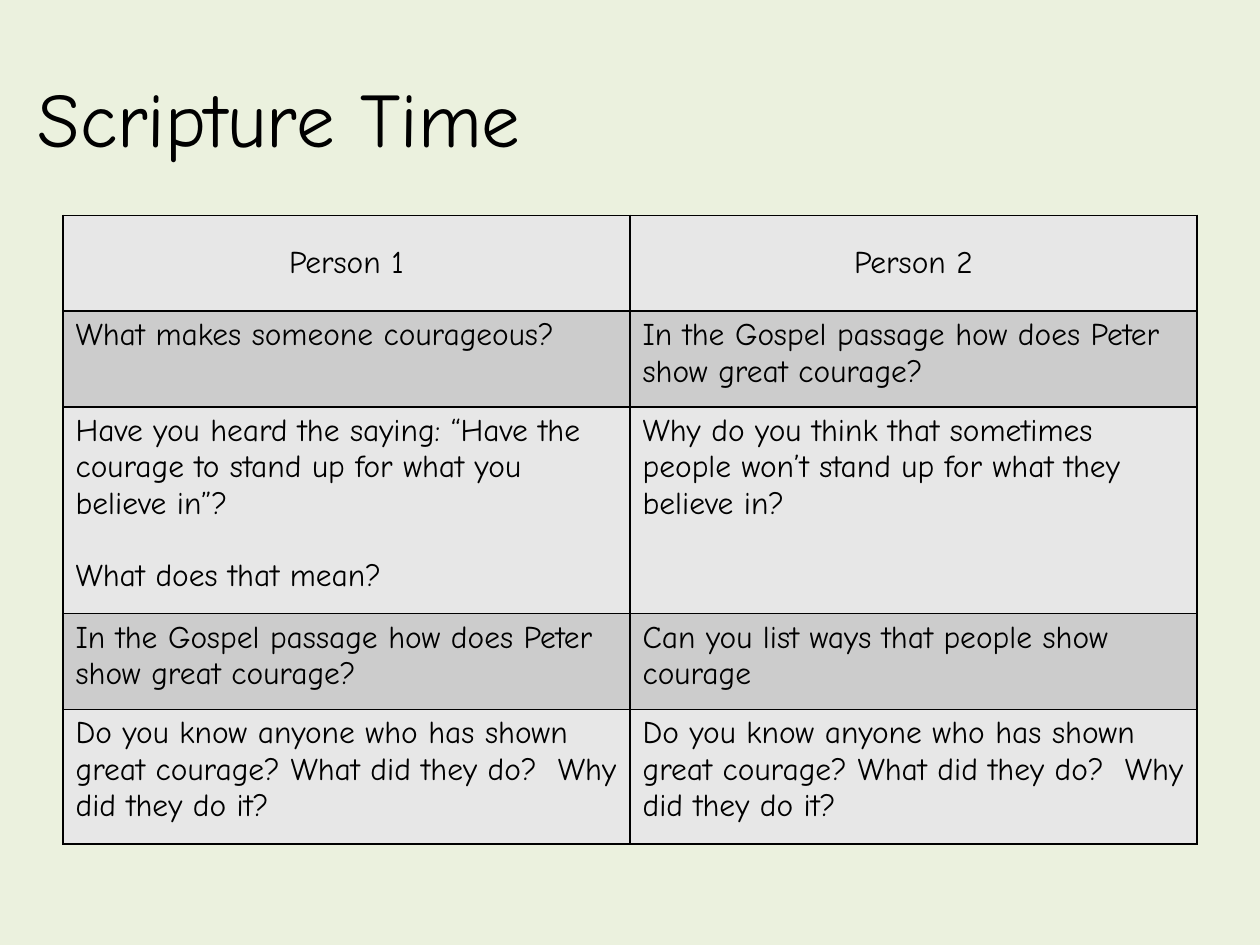
from lxml.etree import SubElement
from pptx import Presentation
from pptx.dml.color import RGBColor
from pptx.enum.text import MSO_ANCHOR as Anchor, PP_ALIGN as Align
from pptx.oxml.ns import qn
from pptx.util import Pt

PX = 9144  # EMU per px, 100 px to the inch
FONT = "Comic Neue"
COLORS = {"background": "EBF1DE", "text": "000000", "border": "000000",
          "light": "E7E7E7", "dark": "CCCCCC"}

# Each cell is a list of paragraphs
PETER = ["In the Gospel passage how does Peter show great courage?"]
ANYONE = ["Do you know anyone who has shown great courage? "
          "What did they do?  Why did they do it?"]
ROWS = [
    (["Person 1"], ["Person 2"]),
    (["What makes someone courageous?"], PETER),
    (["Have you heard the saying: “Have the courage to stand up for what you believe in”?",
      "What does that mean?"],
     ["Why do you think that sometimes people won’t stand up for what they believe in?"]),
    (PETER, ["Can you list ways that people show courage"]),
    (ANYONE, ANYONE),
]
ROW_HEIGHTS = [76, 76, 164, 76, 107]


def color(name):
    return RGBColor.from_string(COLORS[name])


def style(paragraph, size, align):
    paragraph.alignment = align
    paragraph.font.name = FONT
    paragraph.font.size = Pt(size)
    paragraph.font.color.rgb = color("text")


def add_borders(cell):
    properties = cell._tc.get_or_add_tcPr()
    for position, side in enumerate(("lnL", "lnR", "lnT", "lnB")):
        line = SubElement(properties, qn(f"a:{side}"), w=str(Pt(1)))
        fill = SubElement(line, qn("a:solidFill"))
        SubElement(fill, qn("a:srgbClr"), val=COLORS["border"])
        properties.insert(position, line)  # borders come before the cell fill


def place_title(slide, left, top, width, height):
    title = slide.shapes.title
    title.left, title.top = left * PX, top * PX
    title.width, title.height = width * PX, height * PX
    frame = title.text_frame
    frame.text = "Scripture Time"
    frame.vertical_anchor = Anchor.MIDDLE
    style(frame.paragraphs[0], 44, Align.LEFT)


def fill_cell(cell, texts, is_header, fill):
    cell.fill.solid()
    cell.fill.fore_color.rgb = color(fill)
    cell.vertical_anchor = Anchor.MIDDLE if is_header else Anchor.TOP
    add_borders(cell)
    frame = cell.text_frame
    for index, text in enumerate(texts):
        paragraph = frame.add_paragraph() if index else frame.paragraphs[0]
        paragraph.text = text
        style(paragraph, 18, Align.CENTER if is_header else Align.LEFT)
        if index:
            paragraph.space_before = Pt(20.7)  # one line of text


def add_questions(slide, left, top, width):
    columns = len(ROWS[0])
    table = slide.shapes.add_table(
        len(ROWS), columns, left * PX, top * PX, width * PX, sum(ROW_HEIGHTS) * PX).table
    for column in table.columns:
        column.width = width // columns * PX
    for row_index, (row, height) in enumerate(zip(ROWS, ROW_HEIGHTS)):
        table.rows[row_index].height = height * PX
        fill = "dark" if row_index % 2 else "light"
        for column_index, texts in enumerate(row):
            fill_cell(table.cell(row_index, column_index), texts, row_index == 0, fill)


def main():
    presentation = Presentation()
    presentation.slide_width, presentation.slide_height = 1000 * PX, 750 * PX
    slide = presentation.slides.add_slide(presentation.slide_layouts[5])  # title only
    slide.background.fill.solid()
    slide.background.fill.fore_color.rgb = color("background")
    place_title(slide, 20, 30, 930, 125)
    add_questions(slide, 50, 171, 900)
    presentation.save("out.pptx")


if __name__ == "__main__":
    main()
